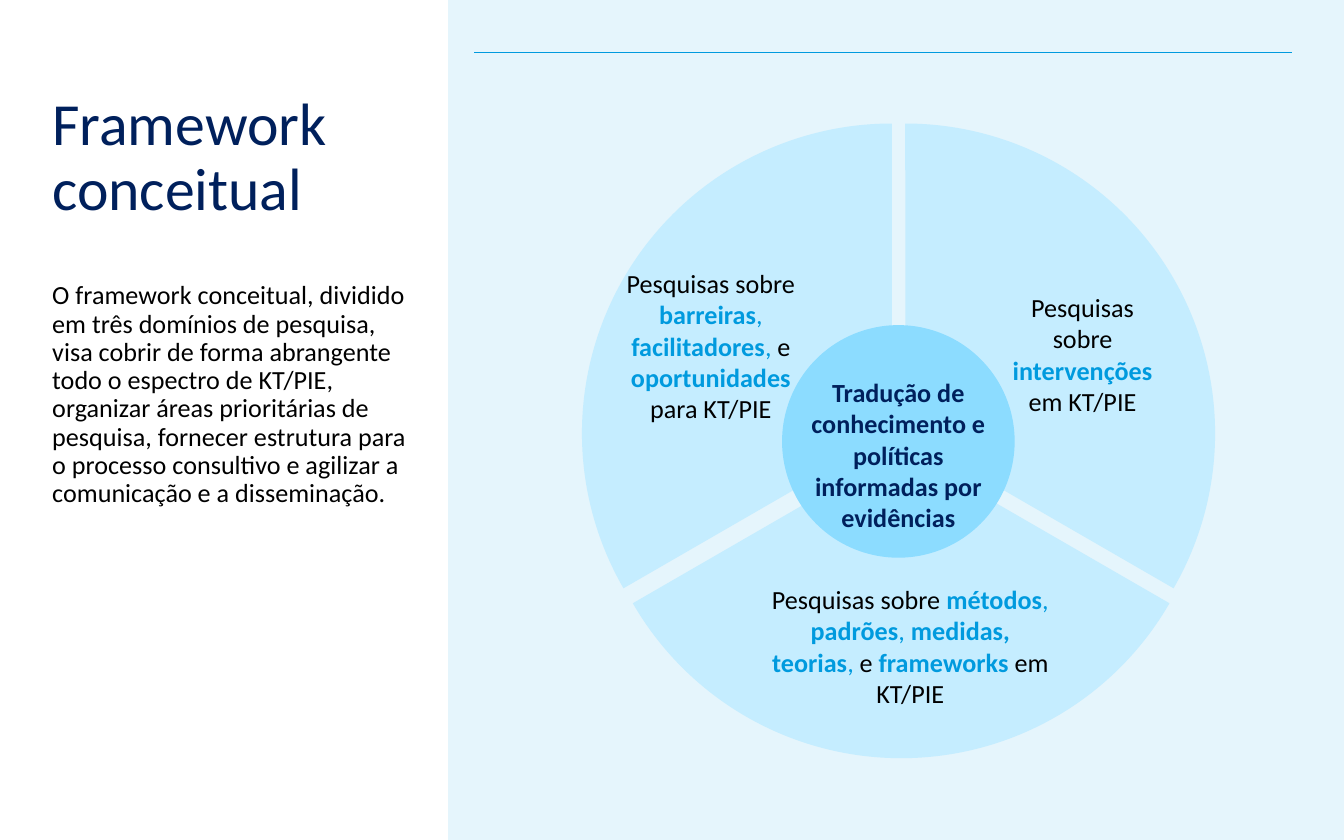
"""Build the conceptual framework slide with a three-sector wheel."""
from lxml import etree
from pptx import Presentation
from pptx import util as u
from pptx.dml.color import RGBColor
from pptx.enum import shapes, text
from pptx.oxml.ns import qn

NAVY, BLUE, BLACK = "00205C", "009ADE", "000000"


def paint(target, color):
    target.solid()
    target.fore_color.rgb = RGBColor.from_string(color)


def add_text(s, box, paragraphs, size=14, inset=None, spacing=None, align=text.PP_ALIGN.CENTER):
    sp = s.shapes.add_textbox(*(u.Pt(v) for v in box))
    tf = sp.text_frame
    tf.word_wrap = True
    if inset is not None:
        tf.margin_left = tf.margin_top = tf.margin_right = tf.margin_bottom = u.Pt(inset)
    for i, runs in enumerate(paragraphs):
        p = tf.add_paragraph() if i else tf.paragraphs[0]
        p.alignment = align
        p.line_spacing = spacing
        for words, color, bold in runs:
            r = p.add_run()
            r.text = words
            r.font.name = "Calibri"
            r.font.size = u.Pt(size)
            r.font.bold = bold
            paint(r.font.fill, color)


prs = Presentation()
prs.slide_width, prs.slide_height = u.Pt(720), u.Pt(450)
s = prs.slides.add_slide(prs.slide_layouts[6])
paint(s.background.fill, "E5F5FC")

panel = s.shapes.add_shape(shapes.MSO_SHAPE.RECTANGLE, 0, 0, u.Pt(240), u.Pt(450))
panel.shadow.inherit = False
paint(panel.fill, "FFFFFF")
panel.line.fill.background()

rule = s.shapes.add_connector(shapes.MSO_CONNECTOR.STRAIGHT, u.Pt(254), u.Pt(28), u.Pt(692), u.Pt(28))
paint(rule.line.fill, BLUE)
rule.line.width = u.Pt(0.5)
etree.SubElement(rule._element.spPr, qn("a:effectLst"))

left = text.PP_ALIGN.LEFT
add_text(s, (28, 50.4, 191, 88), [[("Framework conceitual", NAVY, False)]], 32, 0, 0.9, left)
body = (
    "O framework conceitual, dividido em três domínios de pesquisa, visa cobrir de forma "
    "abrangente todo o espectro de KT/PIE, organizar áreas prioritárias de pesquisa, fornecer "
    "estrutura para o processo consultivo e agilizar a comunicação e a disseminação."
)
add_text(s, (28, 151.2, 191, 220), [[(body, BLACK, False)]], 14, 0, 0.9, left)

pie, oval = shapes.MSO_SHAPE.PIE, shapes.MSO_SHAPE.OVAL
wheel = [
    (pie, 319, 66.2, 332, "C5EDFF", (270, 30)),
    (pie, 311.8, 66.2, 332, "C5EDFF", (150, 270)),
    (pie, 316.8, 74.2, 332, "C5EDFF", (30, 150)),
    (oval, 419, 174.2, 124.6, "8CDCFF", ()),
]
for kind, x, y, size, color, angles in wheel:
    sp = s.shapes.add_shape(kind, u.Pt(x), u.Pt(y), u.Pt(size), u.Pt(size))
    sp.shadow.inherit = False
    paint(sp.fill, color)
    sp.line.fill.background()
    for i, angle in enumerate(angles):
        sp.adjustments[i] = angle * 0.6

lead = ("Pesquisas sobre ", BLACK, False)
comma = (", ", BLUE, False)
last_comma = (",", BLUE, False)
conjunction = (" e ", BLACK, False)
labels = [
    ((533.5, 152.6, 92.9, 75), [
        [lead, ("intervenções", BLUE, True)],
        [("em KT/PIE", BLACK, False)],
    ]),
    ((326.9, 139.7, 108, 92), [[
        lead, ("barreiras", BLUE, True), comma, ("facilitadores", BLUE, True), last_comma,
        conjunction, ("oportunidades", BLUE, True), (" para KT/PIE", BLACK, False),
    ]]),
    ((406, 308.9, 163.4, 92), [[
        lead, ("métodos", BLUE, True), comma, ("padrões", BLUE, True), comma,
        ("medidas, teorias", BLUE, True), last_comma, conjunction,
        ("frameworks ", BLUE, True), ("em KT/PIE", BLACK, False),
    ]]),
    ((419, 198, 124.6, 77), [[
        ("Tradução de conhecimento e políticas informadas por evidências", NAVY, True),
    ]]),
]
for box, paragraphs in labels:
    add_text(s, box, paragraphs)

prs.save("out.pptx")
